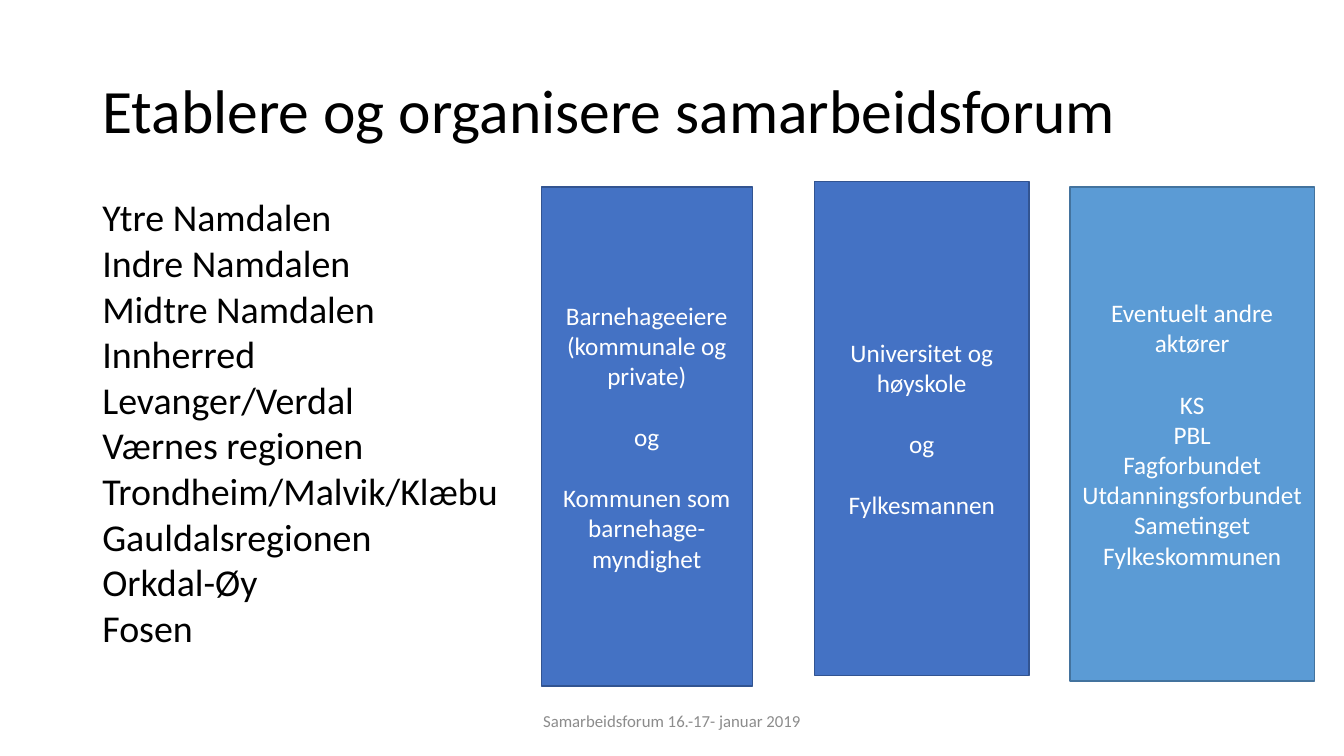
from pptx import Presentation
from pptx.dml.color import RGBColor
from pptx.enum.shapes import MSO_SHAPE
from pptx.enum.text import MSO_ANCHOR, PP_ALIGN
from pptx.util import Cm, Pt

COLORS = {
    "text": "000000",
    "footer": "8C8C8C",
    "white": "FFFFFF",
    "blue": "4472C4",
    "blue_line": "325491",
    "light": "5B9BD5",
    "light_line": "43739E",
}


def rgb(name):
    return RGBColor.from_string(COLORS[name])


def write(sp, groups, size, color, align, anchor, spacing=1.0, gap=0, group_gap=0):
    tf = sp.text_frame
    tf.word_wrap = True
    tf.vertical_anchor = anchor
    first = True
    for lines in groups:
        for i, line in enumerate(lines):
            p = tf.paragraphs[0] if first else tf.add_paragraph()
            p.alignment = align
            p.line_spacing = spacing
            p.space_before = Pt(0 if first else gap if i else group_gap)
            first = False
            r = p.add_run()
            r.text = line
            r.font.name = "Calibri"
            r.font.size = Pt(size)
            r.font.color.rgb = rgb(color)


prs = Presentation()
prs.slide_width, prs.slide_height = Cm(33.87), Cm(19.05)
s = prs.slides.add_slide(prs.slide_layouts[6])

title = s.shapes.add_textbox(Cm(2.33), Cm(1.01), Cm(29.21), Cm(3.68))
write(title, [["Etablere og organisere samarbeidsforum"]], 44, "text",
      PP_ALIGN.LEFT, MSO_ANCHOR.MIDDLE, spacing=0.9)

regions = [
    "Ytre Namdalen", "Indre Namdalen", "Midtre Namdalen", "Innherred",
    "Levanger/Verdal", "Værnes regionen", "Trondheim/Malvik/Klæbu",
    "Gauldalsregionen", "Orkdal-Øy", "Fosen",
]
region_list = s.shapes.add_textbox(Cm(2.33), Cm(5.08), Cm(29.21), Cm(12.09))
write(region_list, [regions], 27.1, "text", PP_ALIGN.LEFT, MSO_ANCHOR.TOP,
      spacing=0.7, gap=9.8)

footer = s.shapes.add_textbox(Cm(11.22), Cm(17.66), Cm(11.43), Cm(1.03))
write(footer, [["Samarbeidsforum 16.-17- januar 2019"]], 12, "footer",
      PP_ALIGN.CENTER, MSO_ANCHOR.MIDDLE)

RECT, PROCESS = MSO_SHAPE.RECTANGLE, MSO_SHAPE.FLOWCHART_PROCESS
columns = [
    (RECT, 13.64, 4.71, 5.32, 12.58, "blue", [
        ["Barnehageeiere", "(kommunale og private)"],
        ["og"],
        ["Kommunen som barnehage-myndighet"],
    ]),
    (PROCESS, 20.53, 4.58, 5.4, 12.45, "blue", [
        ["Universitet og høyskole"],
        ["og"],
        ["Fylkesmannen"],
    ]),
    (PROCESS, 26.97, 4.71, 6.15, 12.45, "light", [
        ["Eventuelt andre aktører"],
        ["KS", "PBL", "Fagforbundet", "Utdanningsforbundet", "Sametinget",
         "Fylkeskommunen"],
    ]),
]
for kind, left, top, width, height, color, groups in columns:
    sp = s.shapes.add_shape(kind, Cm(left), Cm(top), Cm(width), Cm(height))
    sp.shadow.inherit = False
    sp.fill.solid()
    sp.fill.fore_color.rgb = rgb(color)
    sp.line.color.rgb = rgb(color + "_line")
    sp.line.width = Pt(1)
    write(sp, groups, 18, "white", PP_ALIGN.CENTER, MSO_ANCHOR.MIDDLE, group_gap=22)

prs.save("out.pptx")
